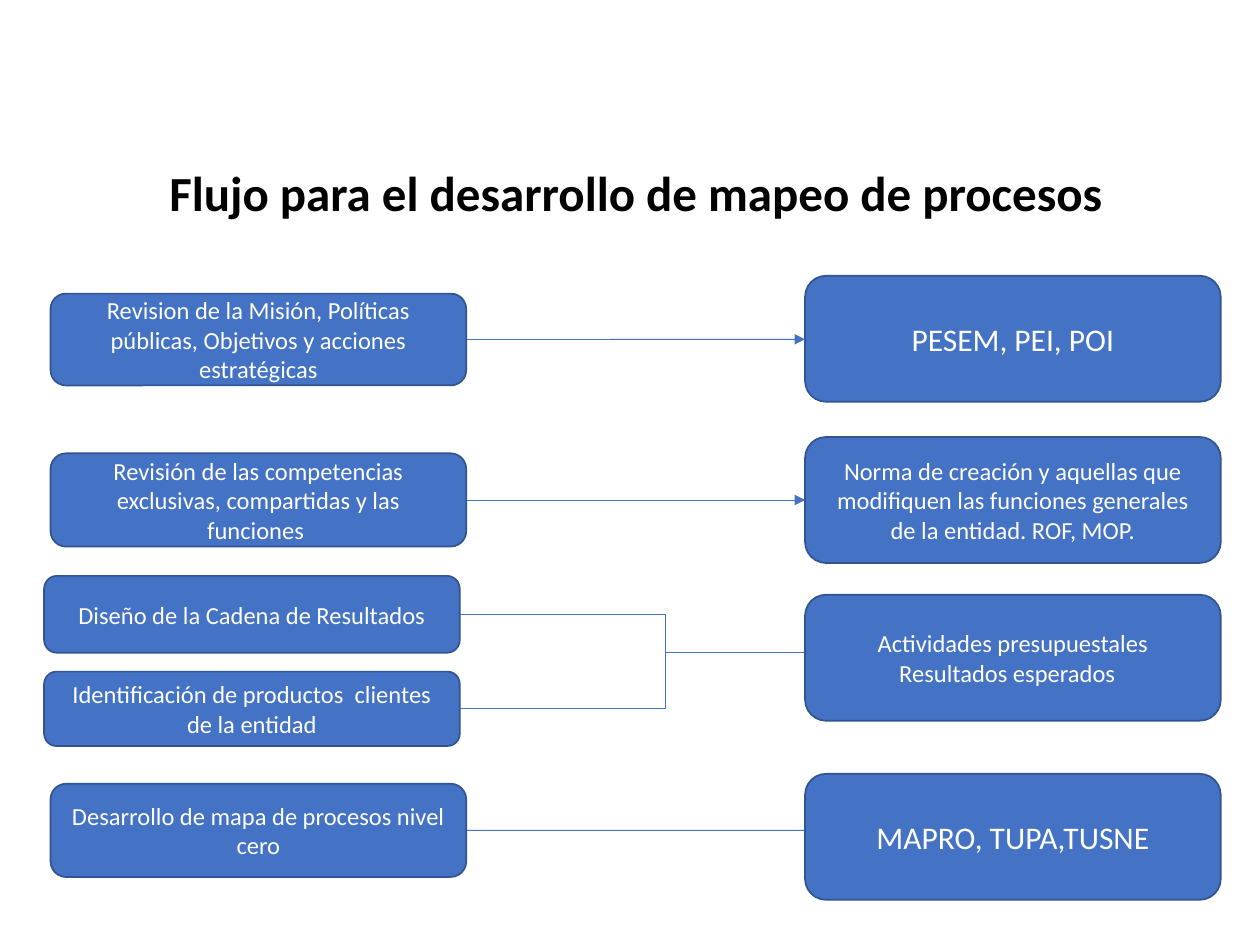
from dataclasses import dataclass

from lxml.etree import SubElement
from pptx import Presentation
from pptx.dml.color import RGBColor
from pptx.enum.shapes import MSO_CONNECTOR, MSO_SHAPE
from pptx.enum.text import MSO_ANCHOR, MSO_AUTO_SIZE, PP_ALIGN
from pptx.oxml.ns import qn
from pptx.slide import Slide
from pptx.text.text import TextFrame
from pptx.util import Cm, Pt

BLUE = RGBColor(0x44, 0x72, 0xC4)
DARK_BLUE = RGBColor(0x32, 0x54, 0x91)
WHITE = RGBColor(0xFF, 0xFF, 0xFF)
BLACK = RGBColor(0x00, 0x00, 0x00)
FONT = "Calibri"

BOX_WIDTH = 8.38
STEP_LEFT = 1.02
PAIR_LEFT = 0.89
RESULT_LEFT = 16.23
RESULT_HEIGHT = 2.54
HIDDEN_END = 17.55  # these arrows end behind the result box


@dataclass(frozen=True)
class FlowBox:
    """A rounded box; lengths in centimetres."""
    text: str
    left: float
    top: float
    height: float = RESULT_HEIGHT
    size: int = 14


@dataclass(frozen=True)
class Link:
    """An arrow from the right side of a box to a point."""
    source: FlowBox
    end_x: float
    end_y: float
    kind: MSO_CONNECTOR = MSO_CONNECTOR.STRAIGHT


MISSION = FlowBox("Revision de la Misión, Políticas públicas, Objetivos y acciones estratégicas",
                  STEP_LEFT, 5.92, 1.85)
POWERS = FlowBox("Revisión de las competencias exclusivas, compartidas y las funciones ",
                 STEP_LEFT, 9.14, 1.88)
CHAIN = FlowBox("Diseño de la Cadena de Resultados", PAIR_LEFT, 11.61, 1.55)
PRODUCTS = FlowBox("Identificación de productos  clientes de la entidad", PAIR_LEFT, 13.54, 1.5)
PROCESS_MAP = FlowBox("Desarrollo de mapa de procesos nivel cero", STEP_LEFT, 15.8, 1.88)

RESULTS = [
    FlowBox("PESEM, PEI, POI", RESULT_LEFT, 5.56, size=18),
    FlowBox("Norma de creación y aquellas que modifiquen las funciones generales "
            "de la entidad. ROF, MOP.", RESULT_LEFT, 8.81),
    FlowBox("Actividades presupuestales Resultados esperados  ", RESULT_LEFT, 11.99),
    FlowBox("MAPRO, TUPA,TUSNE", RESULT_LEFT, 15.6, size=18),
]
BOXES = [MISSION, POWERS, CHAIN, PRODUCTS, PROCESS_MAP, *RESULTS]

LINKS = [
    Link(MISSION, RESULT_LEFT, 6.84),
    Link(POWERS, RESULT_LEFT, 10.08),
    Link(CHAIN, HIDDEN_END, 13.16, MSO_CONNECTOR.ELBOW),
    Link(PRODUCTS, HIDDEN_END, 13.16, MSO_CONNECTOR.ELBOW),
    Link(PROCESS_MAP, HIDDEN_END, 16.74),
]


def write_centred(frame: TextFrame, text: str, size: int, color: RGBColor,
                  bold: bool = False) -> None:
    frame.word_wrap = True
    frame.auto_size = MSO_AUTO_SIZE.NONE
    frame.vertical_anchor = MSO_ANCHOR.MIDDLE
    para = frame.paragraphs[0]
    para.alignment = PP_ALIGN.CENTER
    span = para.add_run()
    span.text = text
    span.font.name = FONT
    span.font.size = Pt(size)
    span.font.bold = bold
    span.font.color.rgb = color


def add_title(page: Slide, text: str) -> None:
    title = page.shapes.title
    title.left, title.top = Cm(PAIR_LEFT), Cm(3.02)
    title.width, title.height = Cm(23.85), Cm(1.85)
    write_centred(title.text_frame, text, 28, BLACK, bold=True)
    title.text_frame.paragraphs[0].line_spacing = 0.9


def add_link(page: Slide, link: Link) -> None:
    source = link.source
    arrow = page.shapes.add_connector(
        link.kind,
        Cm(source.left + BOX_WIDTH), Cm(source.top + source.height / 2),
        Cm(link.end_x), Cm(link.end_y))
    arrow.line.color.rgb = BLUE
    arrow.line.width = Pt(0.5)
    SubElement(arrow.line._get_or_add_ln(), qn("a:tailEnd"), type="triangle")
    SubElement(arrow._element.spPr, qn("a:effectLst"))


def add_box(page: Slide, item: FlowBox) -> None:
    box = page.shapes.add_shape(
        MSO_SHAPE.ROUNDED_RECTANGLE,
        Cm(item.left), Cm(item.top), Cm(BOX_WIDTH), Cm(item.height))
    box.shadow.inherit = False
    box.fill.solid()
    box.fill.fore_color.rgb = BLUE
    box.line.color.rgb = DARK_BLUE
    box.line.width = Pt(1)
    write_centred(box.text_frame, item.text, item.size, WHITE)


def main() -> None:
    deck = Presentation()
    deck.slide_width, deck.slide_height = Cm(25.4), Cm(19.05)
    page = deck.slides.add_slide(deck.slide_layouts.get_by_name("Title Only"))
    add_title(page, "Flujo para el desarrollo de mapeo de procesos")
    for link in LINKS:
        add_link(page, link)
    for item in BOXES:
        add_box(page, item)
    deck.save("out.pptx")


if __name__ == "__main__":
    main()
